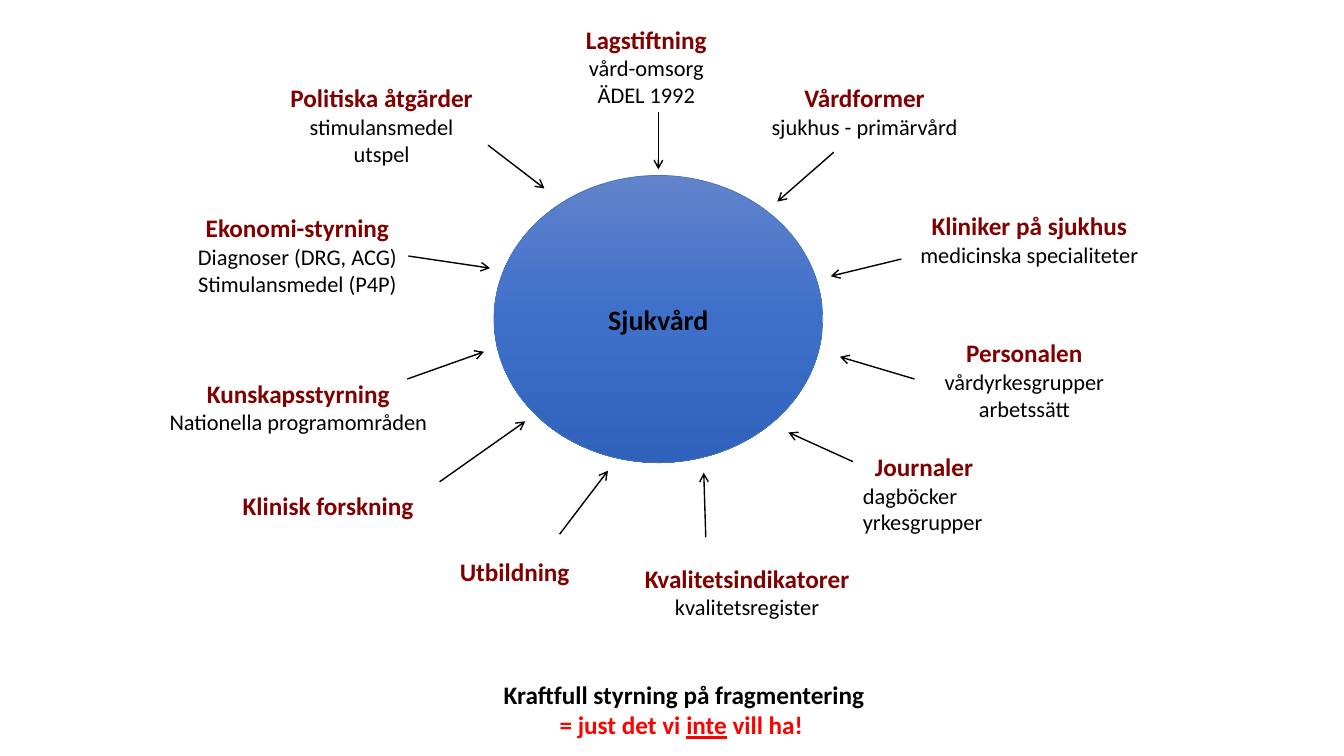
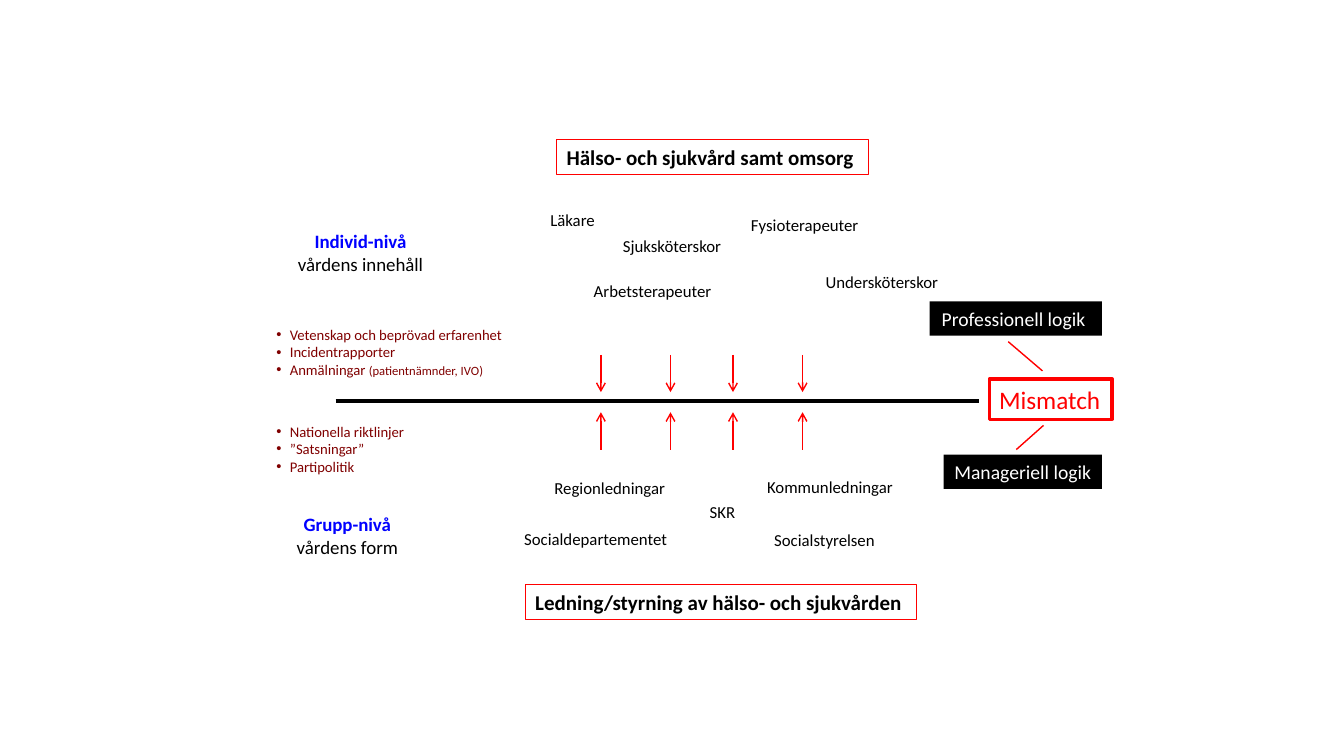
"""Build two slides on how health care is governed; a grid cell is a tenth of an inch."""
import copy

import lxml.etree
import pptx
import pptx.dml.color
import pptx.enum.shapes
import pptx.enum.text
import pptx.oxml.ns
import pptx.util

COLS, ROWS = 133.3, 75
ALIGN = pptx.enum.text.PP_ALIGN
ANCHOR = pptx.enum.text.MSO_ANCHOR
SHAPE = pptx.enum.shapes.MSO_SHAPE
BLACK, WHITE, RED, MAROON, BLUE = "000000", "FFFFFF", "FF0000", "800000", "0000FF"
STYLES = {
    "hub": (20, BLACK, True),
    "head": (18, MAROON, True),
    "sub": (16, BLACK, False),
    "claim": (18, BLACK, True),
    "warn": (18, RED, True),
    "frame": (15, BLACK, True),
    "role": (12, BLACK, False),
    "point": (10.5, MAROON, False),
    "level": (13.5, BLUE, True),
    "note": (13.5, BLACK, False),
    "clash": (18, RED, False),
    "logic": (14, WHITE, False),
}


def hue(code):
    """Turn a hex string into a colour."""
    return pptx.dml.color.RGBColor.from_string(code)


def cell(count):
    """Turn a count of grid cells into a length."""
    return pptx.util.Inches(count / 10)


class Deck:
    """Hold the style and the current slide."""

    def __init__(self):
        """Start an empty deck."""
        self.prs = pptx.Presentation()
        self.prs.slide_width = cell(COLS)
        self.prs.slide_height = cell(ROWS)
        self.slide = None

    def add(self, layout):
        """Start a slide."""
        self.slide = self.prs.slides.add_slide(self.prs.slide_layouts[layout])

    def letter(self, shape, lines, align=ALIGN.CENTER, wrap=False):
        """Fill a shape with styled lines."""
        frame = shape.text_frame
        frame.word_wrap = wrap
        frame.auto_size = pptx.enum.text.MSO_AUTO_SIZE.NONE
        for i, (style, text) in enumerate(lines):
            para = frame.add_paragraph() if i else frame.paragraphs[0]
            for part in [text] if isinstance(text, str) else text:
                para.add_run().text = part
            size, color, bold = STYLES[style]
            para.alignment = align
            para.space_before = pptx.util.Pt(0)
            para.font.name = "Calibri"
            para.font.size = pptx.util.Pt(size)
            para.font.bold = bold
            para.font.color.rgb = hue(color)
        return frame.paragraphs

    def text(self, at, lines, align=ALIGN.CENTER):
        """Add a text box."""
        return self.letter(self.slide.shapes.add_textbox(*map(cell, at)), lines, align)

    def hold(self, index, at, lines, align=ALIGN.CENTER, wrap=False):
        """Move and fill a placeholder."""
        shape = self.slide.placeholders[index]
        shape.left, shape.top, shape.width, shape.height = map(cell, at)
        paras = self.letter(shape, lines, align, wrap)
        shape.text_frame.vertical_anchor = ANCHOR.TOP
        return shape, paras

    def points(self, index, at, items):
        """Add a bullet list in a body placeholder."""
        lines = [("point", item) for item in items]
        paras = self.hold(index, at, lines, ALIGN.LEFT, True)[1]
        for para in paras:
            props = para._p.get_or_add_pPr()
            props.set("marL", str(cell(1.35)))
            props.set("indent", str(-cell(1.35)))
            mark = lxml.etree.Element(pptx.oxml.ns.qn("a:buChar"), char="•")
            props.find(pptx.oxml.ns.qn("a:defRPr")).addprevious(mark)
        return paras

    def edge(self, shape, color, width):
        """Outline a shape."""
        shape.line.color.rgb = hue(color)
        shape.line.width = pptx.util.Pt(width)

    def box(self, at, line, fill=None, edge=None, align=ALIGN.LEFT):
        """Add a framed or filled label."""
        shape = self.slide.shapes.add_shape(SHAPE.RECTANGLE, *map(cell, at))
        shape.shadow.inherit = False
        if fill:
            shape.fill.solid()
            shape.fill.fore_color.rgb = hue(fill)
        else:
            shape.fill.background()
        if edge:
            self.edge(shape, *edge)
        else:
            shape.line.fill.background()
        self.letter(shape, [line], align)

    def disc(self, at, line, tones):
        """Add an ellipse shaded from top to bottom."""
        shape = self.slide.shapes.add_shape(SHAPE.OVAL, *map(cell, at))
        shape.shadow.inherit = False
        shape.fill.gradient()
        shape.fill.gradient_angle = 270
        first = shape._element.spPr.find(".//" + pptx.oxml.ns.qn("a:gs"))
        first.addnext(copy.deepcopy(first))
        for i, (stop, tone) in enumerate(zip(shape.fill.gradient_stops, tones)):
            stop.position = i / (len(tones) - 1)
            stop.color.rgb = hue(tone)
        self.edge(shape, "4472C4", 0.5)
        self.letter(shape, [line])

    def line(self, start, end, color=BLACK, width=1, arrow=False):
        """Add a line or an arrow."""
        kind = pptx.enum.shapes.MSO_CONNECTOR.STRAIGHT
        link = self.slide.shapes.add_connector(kind, *map(cell, (*start, *end)))
        self.edge(link, color, width)
        if arrow:
            stroke = link._element.spPr.find(pptx.oxml.ns.qn("a:ln"))
            lxml.etree.SubElement(stroke, pptx.oxml.ns.qn("a:tailEnd"), type="arrow")
        lxml.etree.SubElement(link._element.spPr, pptx.oxml.ns.qn("a:effectLst"))


def forces(deck):
    """Draw the forces around health care."""
    deck.add(5)
    claim = [("claim", "Kraftfull styrning på fragmentering"),
             ("warn", ("= just det vi ", "inte", " vill ha! "))]
    paras = deck.hold(0, (48.6, 66.9, 38.5, 7.1), claim)[1]
    paras[1].runs[1].font.underline = True
    deck.disc((49, 17.4, 32.6, 28.5), ("hub", "Sjukvård"), ("6183CB", "3E70CA", "3062BB"))
    topics = [
        (57, 1.9, 14.2, "Lagstiftning", "vård-omsorg", "ÄDEL 1992"),
        (75.4, 7.7, 20.7, "Vårdformer", "sjukhus - primärvård"),
        (90.1, 20.4, 24, "Kliniker på sjukhus", "medicinska specialiteter"),
        (92.5, 33, 18.2, "Personalen", "vårdyrkesgrupper", "arbetssätt"),
        (84.6, 44.3, 14.1, "Journaler", "dagböcker", "yrkesgrupper"),
        (62.7, 55.4, 22.8, "Kvalitetsindikatorer", "kvalitetsregister"),
        (44.5, 54.7, 13.1, "Utbildning"),
        (22.9, 48.2, 19.3, "Klinisk forskning"),
        (15.6, 37, 28, "Kunskapsstyrning", "Nationella programområden"),
        (18.5, 20.6, 22, "Ekonomi-styrning", "Diagnoser (DRG, ACG)", "Stimulansmedel (P4P)"),
        (27.6, 7.7, 20.5, "Politiska åtgärder", "stimulansmedel", "utspel"),
    ]
    for left, top, width, head, *subs in topics:
        lines = [("head", head)] + [("sub", sub) for sub in subs]
        paras = deck.text((left, top, width, 4 + 2.7 * len(subs)), lines)
        if head == "Journaler":
            for para in paras[1:]:
                para.alignment = ALIGN.LEFT
    arrows = [
        ((65.3, 11.1), (65.3, 16.8)), ((82.7, 15.1), (77.1, 20)),
        ((89.4, 25.7), (82.4, 27.4)), ((90.7, 37.6), (83.3, 35.4)),
        ((84.6, 45.8), (78.2, 42.9)), ((70, 53.3), (69.8, 46.9)),
        ((55.5, 53), (60.3, 46.7)), ((43.6, 47.8), (52.1, 41.8)),
        ((40.4, 37.6), (48, 34.9)), ((40.5, 25.4), (48.6, 26.6)),
        ((48.4, 14.4), (54, 18.7)),
    ]
    for start, end in arrows:
        deck.line(start, end, arrow=True)


def levels(deck):
    """Draw the clash between the two levels."""
    deck.add(3)
    title, _ = deck.hold(0, (55.2, 13.8, 30.9, 3.5),
                         [("frame", "Hälso- och sjukvård samt omsorg ")], ALIGN.LEFT)
    deck.edge(title, RED, 0.75)
    deck.box((52.1, 58, 38.8, 3.5), ("frame", "Ledning/styrning av hälso- och sjukvården "),
             edge=(RED, 0.75))
    paras = deck.points(1, (26.4, 31.8, 26, 6.3), [
        "Vetenskap och beprövad erfarenhet", "Incidentrapporter",
        ("Anmälningar ", "(patientnämnder, IVO)")])
    paras[2].runs[1].font.size = pptx.util.Pt(9)
    deck.points(2, (26.4, 41.4, 16, 6.3),
                ["Nationella riktlinjer", "”Satsningar”", "Partipolitik"])
    for at, level, note in [
        ((28.4, 22.3, 14.7, 5.6), "Individ-nivå", "vårdens innehåll"),
        ((28.3, 50.4, 12.3, 5.6), "Grupp-nivå", "vårdens form"),
    ]:
        deck.text(at, [("level", level), ("note", note)])
    roles = [
        (53.6, 20.3, 6.5, "Läkare"), (73.5, 20.8, 12.9, "Fysioterapeuter"),
        (60.8, 22.9, 12, "Sjuksköterskor"), (80.9, 26.5, 13.5, "Undersköterskor"),
        (57.9, 27.4, 13.9, "Arbetsterapeuter"), (54, 46.9, 13.2, "Regionledningar"),
        (75.1, 46.8, 15.4, "Kommunledningar"), (69.4, 49.3, 4.7, "SKR"),
        (51, 52, 16.5, "Socialdepartementet"), (75.8, 52.1, 12.1, "Socialstyrelsen"),
    ]
    for left, top, width, role in roles:
        deck.text((left, top, width, 3), [("role", role)], ALIGN.LEFT)
    deck.line((33.3, 39.8), (97.1, 39.8), width=3)
    for col in (59.6, 66.5, 72.7, 79.6):
        for start, end in ((35.2, 38.9), (44.6, 40.9)):
            deck.line((col, start), (col, end), RED, arrow=True)
    deck.box((98.1, 37.6, 12.2, 4), ("clash", "Mismatch"), edge=(RED, 2.25))
    for at, logic in [((92.2, 29.9, 17.1, 3.4), "Professionell logik "),
                      ((93.6, 45.1, 15.7, 3.4), "Manageriell logik")]:
        deck.box(at, ("logic", logic), fill=BLACK, align=ALIGN.CENTER)
    deck.line((100, 33.9), (103.4, 36.8), RED)
    deck.line((100.8, 44.6), (103.5, 42.2), RED)


def main():
    """Build and save the deck."""
    deck = Deck()
    forces(deck)
    levels(deck)
    deck.prs.save("out.pptx")


if __name__ == "__main__":
    main()
